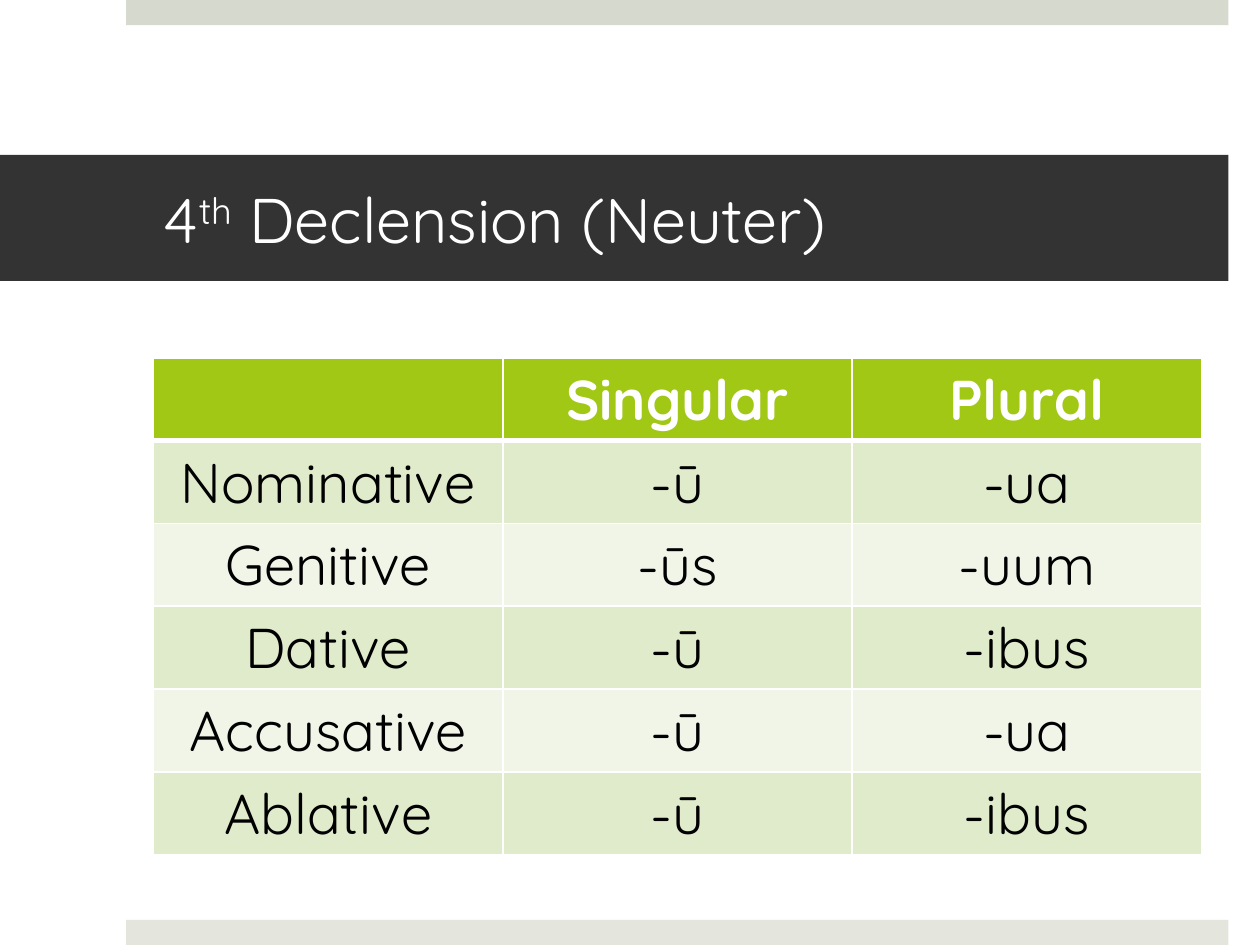
from lxml.etree import SubElement
from pptx import Presentation
from pptx.dml.color import RGBColor
from pptx.enum.shapes import MSO_SHAPE as Preset
from pptx.enum.text import MSO_ANCHOR as Anchor, PP_ALIGN as Align
from pptx.oxml.ns import qn
from pptx.util import Pt

COLORS = {
    "white": "FFFFFF", "black": "000000", "title": "333333",
    "top": "D6D9CD", "bottom": "E4E6DE",
    "header": "A2C816", "dark_band": "E0EBCC", "light_band": "F0F5E8",
}
ENDINGS = [
    ["", "Singular", "Plural"],
    ["Nominative", "-ū", "-ua"],
    ["Genitive", "-ūs", "-uum"],
    ["Dative", "-ū", "-ibus"],
    ["Accusative", "-ū", "-ua"],
    ["Ablative", "-ū", "-ibus"],
]


def add_bar(page, left, top, width, height, color):
    bar = page.shapes.add_shape(Preset.RECTANGLE, Pt(left), Pt(top), Pt(width), Pt(height))
    bar.shadow.inherit = False
    bar.fill.solid()
    bar.fill.fore_color.rgb = RGBColor.from_string(COLORS[color])
    bar.line.fill.background()
    return bar


def add_span(para, text, size, color, bold=False):
    span = para.add_run()
    span.text = text
    span.font.name = "Quicksand"
    span.font.size = Pt(size)
    span.font.bold = bold
    span.font.color.rgb = RGBColor.from_string(COLORS[color])
    return span


deck = Presentation()
deck.slide_width, deck.slide_height = Pt(720), Pt(540)
page = deck.slides.add_slide(deck.slide_layouts[6])

add_bar(page, 72, 0, 630, 14.4, "top")
add_bar(page, 72, 525.6, 630, 14.4, "bottom")

title = add_bar(page, 0, 88.5, 702, 72, "title")
frame = title.text_frame
frame.word_wrap = True
frame.vertical_anchor = Anchor.MIDDLE
frame.margin_left, frame.margin_right = Pt(93.6), Pt(21.6)
frame.margin_top = frame.margin_bottom = Pt(3.6)
para = frame.paragraphs[0]
para.alignment = Align.LEFT
add_span(para, "4", 36, "white")
ordinal = add_span(para, "th", 36, "white")
ordinal._r.get_or_add_rPr().set("baseline", "30000")
add_span(para, " Declension (Neuter)", 36, "white")

row_height, column_width = 47.2, 199.6
table = page.shapes.add_table(
    len(ENDINGS), 3, Pt(87.8), Pt(204.5),
    Pt(3 * column_width), Pt(len(ENDINGS) * row_height),
).table
for column in table.columns:
    column.width = Pt(column_width)

for r, words in enumerate(ENDINGS):
    table.rows[r].height = Pt(row_height)
    band = "header" if r == 0 else "dark_band" if r % 2 else "light_band"
    for c, word in enumerate(words):
        cell = table.cell(r, c)
        properties = cell._tc.get_or_add_tcPr()
        for side in ("lnL", "lnR", "lnT", "lnB"):
            thick = (r, side) in ((0, "lnB"), (1, "lnT"))
            border = SubElement(properties, qn(f"a:{side}"), w=str(Pt(3 if thick else 1)))
            paint = SubElement(border, qn("a:solidFill"))
            SubElement(paint, qn("a:srgbClr"), val=COLORS["white"])
        cell.fill.solid()
        cell.fill.fore_color.rgb = RGBColor.from_string(COLORS[band])
        para = cell.text_frame.paragraphs[0]
        para.alignment = Align.CENTER
        if word:
            add_span(para, word, 32, "black" if r else "white", r == 0)

deck.save("out.pptx")
